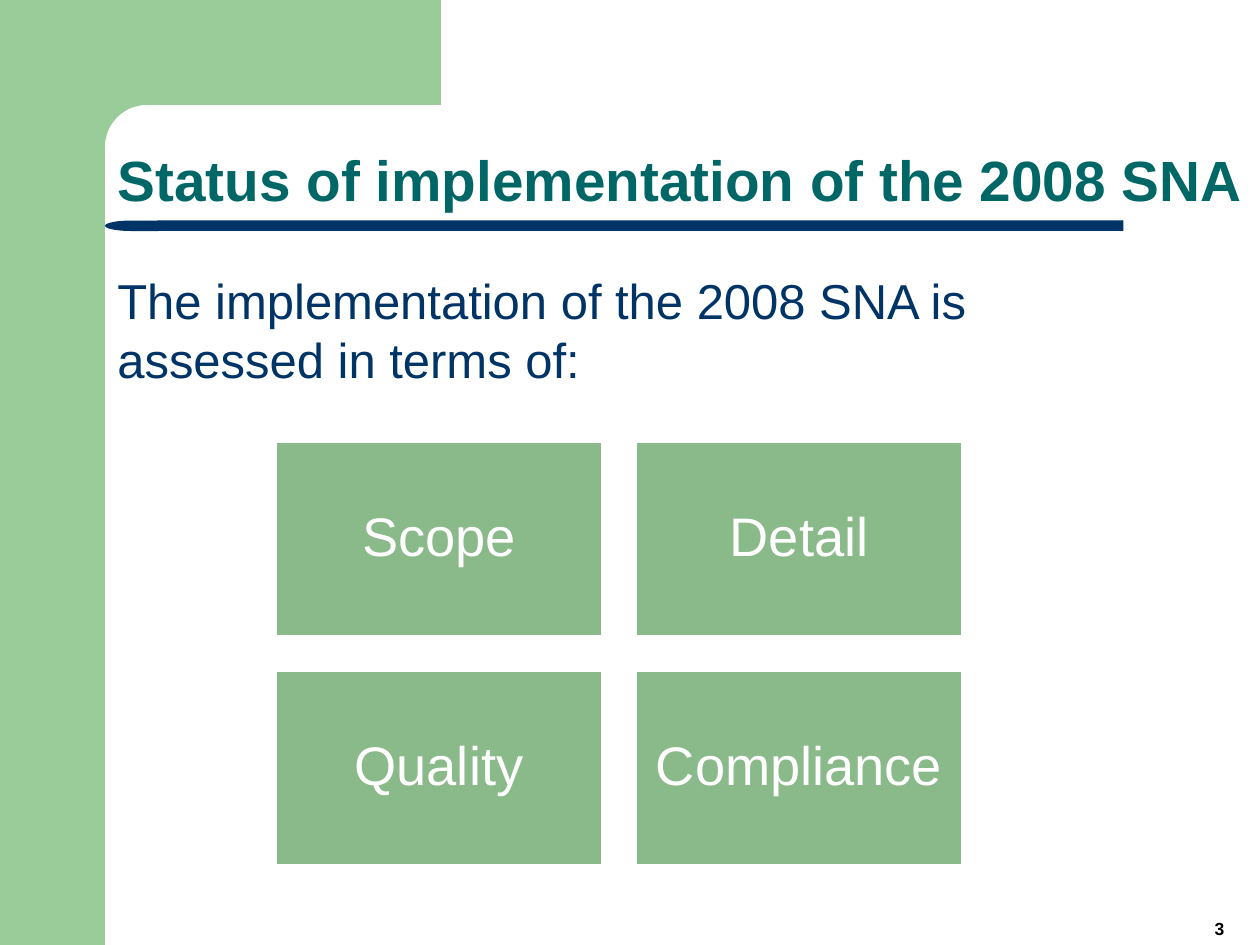
from math import cos, pi, sin
from typing import NamedTuple

from pptx import Presentation
from pptx.dml.color import RGBColor
from pptx.enum.shapes import MSO_SHAPE as SHAPE
from pptx.enum.text import MSO_ANCHOR as ANCHOR, MSO_AUTO_SIZE as AUTO, PP_ALIGN as ALIGN
from pptx.util import Inches, Pt

COLORS = {"green": "99CC99", "box": "8AB98A", "navy": "003366",
          "teal": "006666", "white": "FFFFFF", "black": "000000"}
WIDTH, HEIGHT = Inches(10), Inches(7.5)
COLUMNS = 12
UNIT = WIDTH / COLUMNS
ROWS = HEIGHT / UNIT


class Area(NamedTuple):
    """Left, top, width and height in grid columns and rows."""
    left: float
    top: float
    width: float
    height: float

    def emu(self) -> list[int]:
        """Return the area in slide units."""
        return [round(v * UNIT) for v in self]


class Style(NamedTuple):
    """Text format of one paragraph and its frame."""
    size: float
    color: str
    bold: bool = False
    align: ALIGN = ALIGN.LEFT
    anchor: ANCHOR = ANCHOR.TOP
    spacing: float = 1.0
    inset: tuple[float, float] = (0.1, 0.05)


class Band(NamedTuple):
    """Plain filled shape of the slide frame."""
    kind: SHAPE
    area: Area
    color: str
    rotation: int = 0


BANDS = [
    Band(SHAPE.RECTANGLE, Area(0, 0, 1, ROWS), "green"),
    Band(SHAPE.RECTANGLE, Area(1.5, 2.1, 9.2, 0.1), "navy"),
    Band(SHAPE.FLOWCHART_DELAY, Area(1, 2.1, 0.51, 0.1), "navy", 180),
]
CRITERIA = [["Scope", "Detail"], ["Quality", "Compliance"]]
FIRST_BOX = Area(2.62, 4.2, 3.12, 1.87)
BOX_GAP = 0.31
TITLE = Style(32.4, "teal", True, anchor=ANCHOR.BOTTOM, spacing=0.9)
BODY = Style(28, "navy")
NUMBER = Style(10, "black", True, ALIGN.CENTER, ANCHOR.BOTTOM)
LABEL = Style(31, "white", False, ALIGN.CENTER, ANCHOR.MIDDLE, 0.9, (0.13, 0.13))


def rgb(name: str) -> RGBColor:
    """Look up a palette colour."""
    return RGBColor.from_string(COLORS[name])


def set_all(target, values: dict) -> None:
    """Set attributes from a dict of format values."""
    for name, value in values.items():
        setattr(target, name, value)


def write(s, text: str, style: Style) -> None:
    """Put one formatted paragraph in a shape."""
    tf = s.text_frame
    x, y = map(Inches, style.inset)
    set_all(tf, {"word_wrap": True, "auto_size": AUTO.NONE,
                 "vertical_anchor": style.anchor, "margin_left": x,
                 "margin_right": x, "margin_top": y, "margin_bottom": y})
    p = tf.paragraphs[0]
    set_all(p, {"alignment": style.align, "line_spacing": style.spacing})
    r = p.add_run()
    r.text = text
    set_all(r.font, {"name": "Arial", "size": Pt(style.size), "bold": style.bold})
    r.font.color.rgb = rgb(style.color)


def paint(s, color: str) -> None:
    """Give a shape a flat fill without line or shadow."""
    s.shadow.inherit = False
    s.fill.solid()
    s.fill.fore_color.rgb = rgb(color)
    s.line.fill.background()


def add_band(sp, band: Band) -> None:
    """Draw one frame shape."""
    s = sp.add_shape(band.kind, *band.area.emu())
    s.rotation = band.rotation
    paint(s, band.color)


def add_corner(sp) -> None:
    """Draw the top flange with its rounded inner corner."""
    radius, steps = 0.4, 24
    center = 1 + radius
    angles = [pi / 2 * i / steps for i in range(steps + 1)]
    arc = [(center - radius * sin(a), center - radius * cos(a)) for a in angles]
    points = [(4.2, 1), *arc, (1, 1.54), (0.6, 1.54), (0.6, 0)]
    builder = sp.build_freeform(4200, 0, scale=UNIT / 1000)
    builder.add_line_segments([(round(x * 1000), round(y * 1000)) for x, y in points])
    paint(builder.convert_to_shape(), "green")


def add_text(sp, area: Area, text: str, style: Style) -> None:
    """Add a text box."""
    write(sp.add_textbox(*area.emu()), text, style)


def add_box(sp, column: int, row: int, label: str) -> None:
    """Draw one criterion in the two-by-two grid."""
    left, top, width, height = FIRST_BOX
    area = Area(left + column * (width + BOX_GAP),
                top + row * (height + BOX_GAP), width, height)
    s = sp.add_shape(SHAPE.RECTANGLE, *area.emu())
    paint(s, "box")
    s.line.color.rgb = rgb("white")
    s.line.width = Pt(2)
    write(s, label, LABEL)


def main() -> None:
    """Build and save the slide."""
    prs = Presentation()
    set_all(prs, {"slide_width": WIDTH, "slide_height": HEIGHT})
    slide = prs.slides.add_slide(prs.slide_layouts[5])
    sp = slide.shapes
    for band in BANDS:
        add_band(sp, band)
    add_corner(sp)
    title = sp.title
    set_all(title, dict(zip(("left", "top", "width", "height"),
                            Area(1, 0.6, 11, 1.5).emu())))
    write(title, "Status of implementation of the 2008 SNA", TITLE)
    add_text(sp, Area(1, 2.52, 10.2, 5.48),
             "The implementation of the 2008 SNA is assessed in terms of:", BODY)
    add_text(sp, Area(11.23, 8.6, 0.77, 0.4), "3", NUMBER)
    for row, labels in enumerate(CRITERIA):
        for column, label in enumerate(labels):
            add_box(sp, column, row, label)
    prs.save("out.pptx")


if __name__ == "__main__":
    main()
